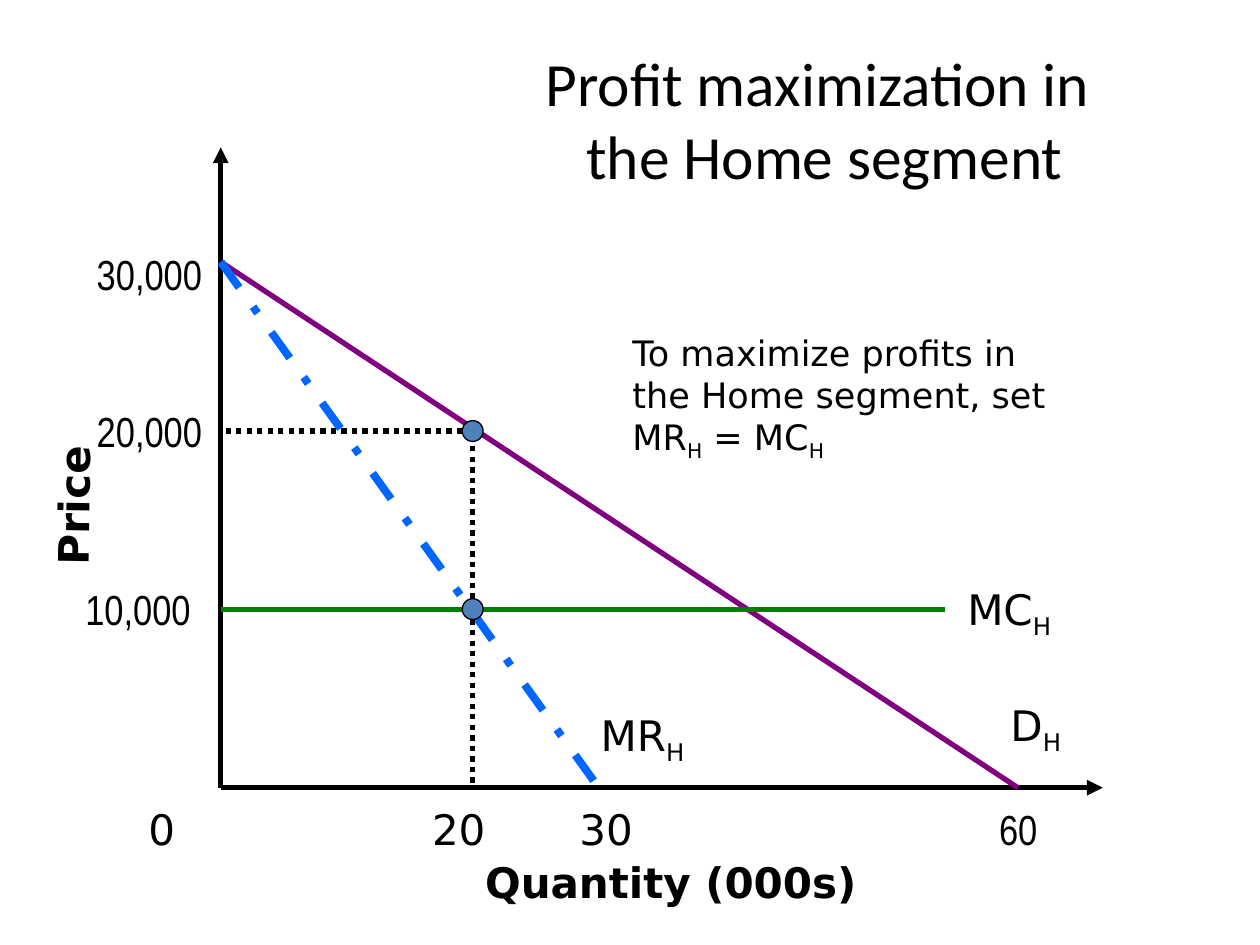
from lxml import etree
from pptx import Presentation, util as u
from pptx.dml.color import RGBColor
from pptx.enum import dml, shapes, text
from pptx.oxml.ns import qn

HUES = {"ink": "000000", "demand": "800080", "revenue": "0066FF",
        "cost": "008000", "dot": "4F81BD"}
SANS, SLIM = "DejaVu Sans", "Arial Narrow"
DASH = dml.MSO_LINE

deck = Presentation()
deck.slide_width, deck.slide_height = u.Cm(25.4), u.Cm(19.05)
slide = deck.slides.add_slide(deck.slide_layouts[6])


def draw(x1, y1, x2, y2, hue="ink", width=3, dash=None, arrow=False):
    """Add a straight line, with an optional arrowhead at its end."""
    line = slide.shapes.add_connector(
        shapes.MSO_CONNECTOR.STRAIGHT, u.Cm(x1), u.Cm(y1), u.Cm(x2), u.Cm(y2))
    line.line.color.rgb = RGBColor.from_string(HUES[hue])
    line.line.width = u.Pt(width)
    if dash:
        line.line.dash_style = dash
    props = line._element.spPr
    if arrow:
        etree.SubElement(props.find(qn("a:ln")), qn("a:tailEnd"), type="triangle")
    etree.SubElement(props, qn("a:effectLst"))


def write(words, x, y, w, h=1.27, font=SANS, size=24, bold=False):
    """Add a text box; pieces after "_" alternate between subscript and normal."""
    box = slide.shapes.add_textbox(u.Cm(x), u.Cm(y), u.Cm(w), u.Cm(h))
    frame = box.text_frame
    frame.word_wrap = True
    frame.auto_size = text.MSO_AUTO_SIZE.SHAPE_TO_FIT_TEXT
    for i, piece in enumerate(words.split("_")):
        run = frame.paragraphs[0].add_run()
        run.text = piece
        run.font.name, run.font.size, run.font.bold = font, u.Pt(size), bold
        run.font.color.rgb = RGBColor.from_string(HUES["ink"])
        if i % 2:
            run.font._element.set("baseline", "-25000")
    return box


# Key places on the graph
left, base = 4.45, 15.88
top = 5.28
best, price, cost = 9.53, 8.69, 12.28
size = 0.42

# Axes and curves
draw(left, base, left, 2.97, arrow=True)
draw(left, base, 22.23, base, arrow=True)
draw(left, top, 20.52, base, "demand")
draw(left, top, 12.07, base, "revenue", 4.5, DASH.DASH_DOT)
draw(left, cost, 19.05, cost, "cost")

# Guides to the best price and quantity
for x1, y1, x2, y2 in ((best, cost - size / 2, best, price),
                       (best, cost + size / 2, best, base),
                       (best, price, left, price)):
    draw(x1, y1, x2, y2, dash=DASH.ROUND_DOT)

for y in (cost, price):
    dot = slide.shapes.add_shape(
        shapes.MSO_SHAPE.OVAL, u.Cm(best - size / 2), u.Cm(y - size / 2),
        u.Cm(size), u.Cm(size))
    dot.shadow.inherit = False
    dot.fill.solid()
    dot.fill.fore_color.rgb = RGBColor.from_string(HUES["dot"])
    dot.line.color.rgb = RGBColor.from_string(HUES["ink"])
    dot.line.width = u.Pt(0.75)

# Scale labels
for words, x, y in (("30,000", 1.7, 4.88), ("20,000", 1.7, 8.05),
                    ("10,000", 1.47, 11.63)):
    write(words, x, y, 6.78, font=SLIM)
for words, x, w, font in (("0", 2.74, 1.9, SANS), ("20", 8.46, 2.97, SANS),
                          ("30", 11.43, 3.61, SANS), ("60", 19.89, 2.74, SLIM)):
    write(words, x, 16.08, w, font=font)

# Axis names
write("Quantity (000s)", 9.53, 17.15, 9.09, bold=True)
write("Price", -1.37, 8.15, 5.72, bold=True).rotation = 270.9

# Curve names
for words, x, y, w in (("D_H", 20.12, 13.97, 4.01), ("MR_H", 11.86, 14.17, 2.34),
                       ("MC_H", 19.25, 11.63, 3.18)):
    write(words, x, y, w)

write("To maximize profits in the Home segment, set MR_H_ = MC_H",
      12.5, 6.55, 8.89, 2.79, size=20)

# Title
title = write("Profit maximization in ", 5.28, 0.61, 22.68, 3.56, "Calibri", 35.1)
title.text_frame.auto_size = text.MSO_AUTO_SIZE.NONE
title.text_frame.vertical_anchor = text.MSO_ANCHOR.MIDDLE
para = title.text_frame.paragraphs[0]
para.alignment = text.PP_ALIGN.CENTER
para.add_line_break()
last = para.add_run()
last.text = "the Home segment"
last.font.name, last.font.size = "Calibri", u.Pt(35.1)
last.font.color.rgb = RGBColor.from_string(HUES["ink"])

deck.save("out.pptx")
